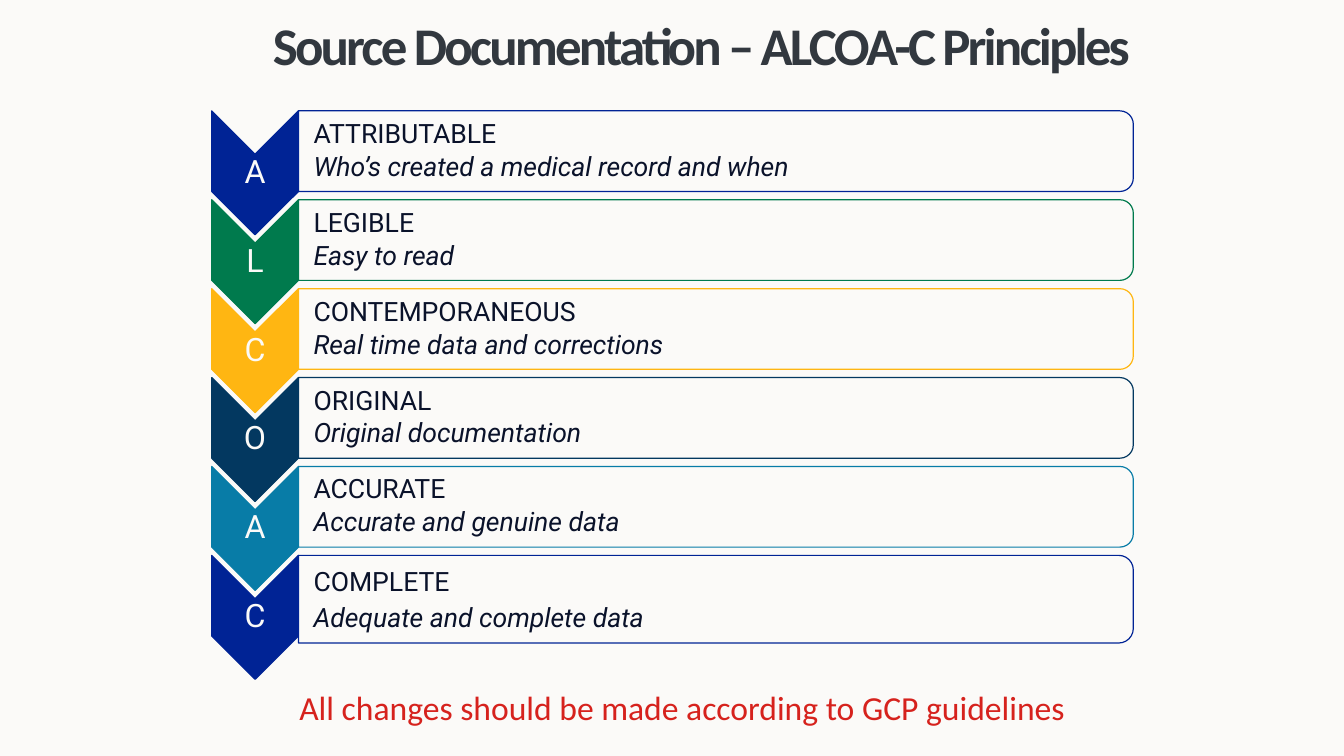
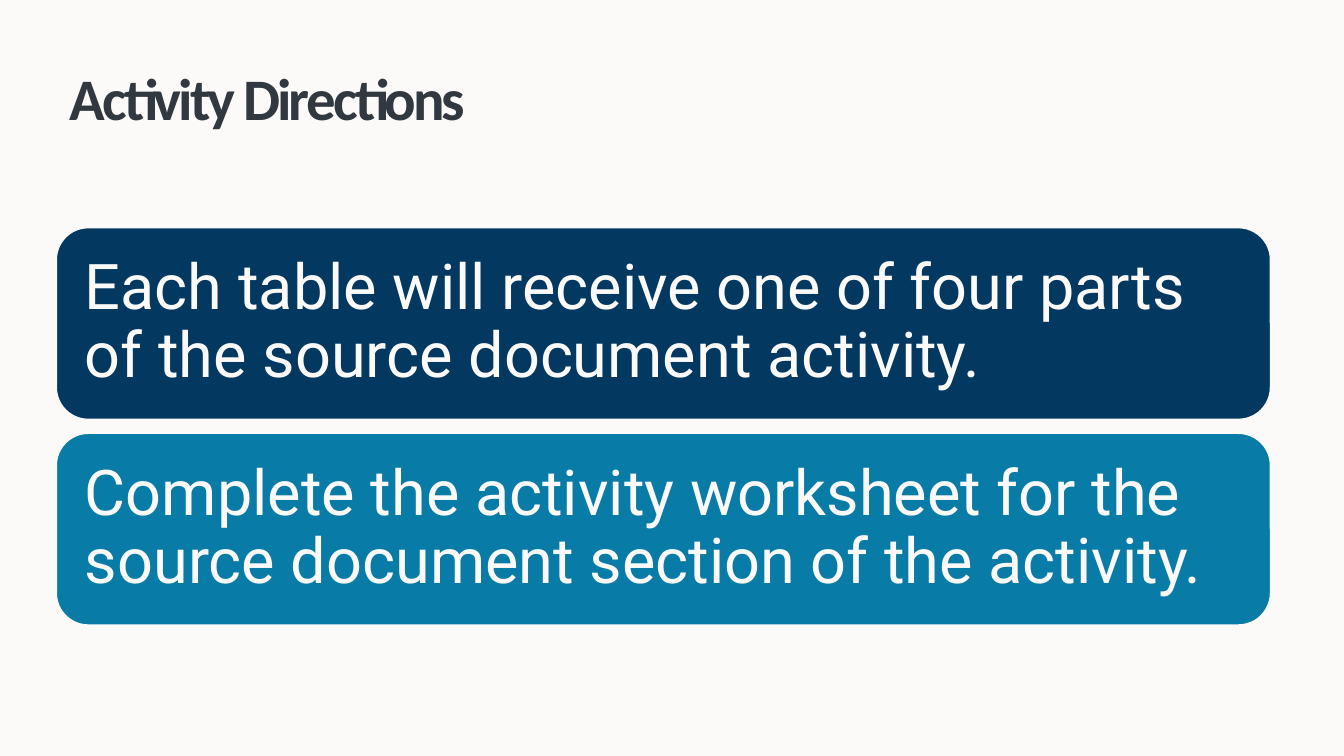
from pptx import Presentation
from pptx.dml.color import RGBColor
from pptx.enum.shapes import MSO_SHAPE as Shape
from pptx.enum.text import MSO_ANCHOR as Anchor, PP_ALIGN as Align
from pptx.util import Inches, Pt

# Colours and fonts
PAPER = RGBColor(0xFB, 0xFA, 0xF8)
SLATE = RGBColor(0x32, 0x38, 0x3F)
INK = RGBColor(0x0A, 0x12, 0x2A)
RED = RGBColor(0xD6, 0x22, 0x1D)
BLUE = RGBColor(0x00, 0x23, 0x95)
GREEN = RGBColor(0x00, 0x7A, 0x4D)
AMBER = RGBColor(0xFF, 0xB6, 0x12)
NAVY = RGBColor(0x03, 0x38, 0x60)
TEAL = RGBColor(0x08, 0x7C, 0xA7)
HEAD_FONT, BODY_FONT = "Calibri", "Roboto"

# Slide and grid, in inches
SLIDE_W, SLIDE_H = 13.33, 7.5
ROW_TOP, LAST_ROW_TOP = 1.1, 5.51
CHEVRON_X, CHEVRON_W, CHEVRON_H = 2.1, 0.86, 1.23
PANEL_X, PANEL_W, PANEL_H = CHEVRON_X + CHEVRON_W, 8.28, 0.8
LAST_PANEL_H = 0.87
CARD_X, CARD_Y, CARD_W, CARD_H, CARD_GAP = 0.56, 2.26, 12.04, 1.9, 0.14

PRINCIPLES = [
    ("ATTRIBUTABLE", "Who’s created a medical record and when", BLUE),
    ("LEGIBLE", "Easy to read", GREEN),
    ("CONTEMPORANEOUS", "Real time data and corrections", AMBER),
    ("ORIGINAL", "Original documentation", NAVY),
    ("ACCURATE", "Accurate and genuine data", TEAL),
    ("COMPLETE", "Adequate and complete data", BLUE),
]
DIRECTIONS = [
    ("Each table will receive one of four parts of the source document activity.", NAVY),
    ("Complete the activity worksheet for the source document section of the activity.", TEAL),
]


def style_font(font, name, size, color):
    font.name, font.size = name, Pt(size)
    font.color.rgb = color


def set_frame(tf, inset_x, inset_y):
    tf.word_wrap = True
    tf.vertical_anchor = Anchor.MIDDLE
    tf.margin_left = tf.margin_right = Inches(inset_x)
    tf.margin_top = tf.margin_bottom = Inches(inset_y)


def write(tf, lines, name, size, color, align=Align.LEFT, spacing=1.0, after=0):
    """Fill a text frame with one paragraph per line."""
    tf.text = "\n".join(lines)
    for p in tf.paragraphs:
        p.alignment, p.line_spacing, p.space_after = align, spacing, Pt(after)
        for r in p.runs:
            style_font(r.font, name, size, color)


def add_slide(prs, title, box, size, align=Align.LEFT):
    """Title-only slide with the shared title style."""
    slide = prs.slides.add_slide(prs.slide_layouts[5])
    sp = slide.shapes.title
    sp.left, sp.top, sp.width, sp.height = map(Inches, box)
    set_frame(sp.text_frame, 0.13, 0.07)
    write(sp.text_frame, [title], HEAD_FONT, size, SLATE, align)
    r = sp.text_frame.paragraphs[0].runs[0]
    r.font.bold = True
    r.font._element.set("spc", "-200")
    return slide


def add_box(slide, kind, x, y, w, h, fill, line, rotation=0):
    """Preset shape that covers the given area after any quarter turn."""
    if rotation:
        x, y, w, h = x + (w - h) / 2, y + (h - w) / 2, h, w
    sp = slide.shapes.add_shape(kind, *map(Inches, (x, y, w, h)))
    sp.rotation = rotation
    sp.shadow.inherit = False
    sp.fill.solid()
    sp.fill.fore_color.rgb = fill
    sp.line.color.rgb = line
    sp.line.width = Pt(0.85)
    return sp


def add_text(slide, x, y, w, h, inset=0.02):
    tf = slide.shapes.add_textbox(*map(Inches, (x, y, w, h))).text_frame
    set_frame(tf, inset, 0.02)
    return tf


def add_principle(slide, y, panel_h, name, meaning, color, spacing):
    # Chevron with the initial
    chevron = (CHEVRON_X, y, CHEVRON_W, CHEVRON_H)
    add_box(slide, Shape.CHEVRON, *chevron, color, color, 90)
    write(add_text(slide, *chevron), [name[0]], BODY_FONT, 23, PAPER,
          Align.CENTER, 0.9, 8)
    # Outlined panel with the name and its meaning
    panel = (PANEL_X, y, PANEL_W, panel_h)
    add_box(slide, Shape.ROUND_2_SAME_RECTANGLE, *panel, PAPER, color, 90)
    tf = add_text(slide, *panel, inset=0.15)
    write(tf, [name, meaning], BODY_FONT, 19, INK, spacing=spacing, after=3)
    tf.paragraphs[1].runs[0].font.italic = True


def build_principles(prs):
    slide = add_slide(prs, "Source Documentation – ALCOA-C Principles",
                      (0.93, 0.04, 12.05, 0.79), 37.8, Align.CENTER)
    last = len(PRINCIPLES) - 1
    pitch = (LAST_ROW_TOP - ROW_TOP) / last
    for i, principle in enumerate(PRINCIPLES):
        panel_h, spacing = (LAST_PANEL_H, 1.0) if i == last else (PANEL_H, 0.9)
        add_principle(slide, ROW_TOP + i * pitch, panel_h, *principle, spacing)
    # Closing reminder
    write(add_text(slide, 0.74, 6.76, 12.05, 0.5),
          ["All changes should be made according to GCP guidelines"],
          HEAD_FONT, 24, RED, Align.CENTER)


def build_directions(prs):
    slide = add_slide(prs, "Activity Directions", (CARD_X, 0.34, CARD_W, 1.25), 42)
    for i, (direction, color) in enumerate(DIRECTIONS):
        y = CARD_Y + i * (CARD_H + CARD_GAP)
        sp = add_box(slide, Shape.ROUNDED_RECTANGLE, CARD_X, y, CARD_W, CARD_H,
                     color, PAPER)
        set_frame(sp.text_frame, 0.19, 0.19)
        write(sp.text_frame, [direction], BODY_FONT, 45, PAPER,
              spacing=0.9, after=16)


def main():
    prs = Presentation()
    prs.slide_width, prs.slide_height = Inches(SLIDE_W), Inches(SLIDE_H)
    fill = prs.slide_master.background.fill
    fill.solid()
    fill.fore_color.rgb = PAPER
    build_principles(prs)
    build_directions(prs)
    prs.save("out.pptx")


if __name__ == "__main__":
    main()
